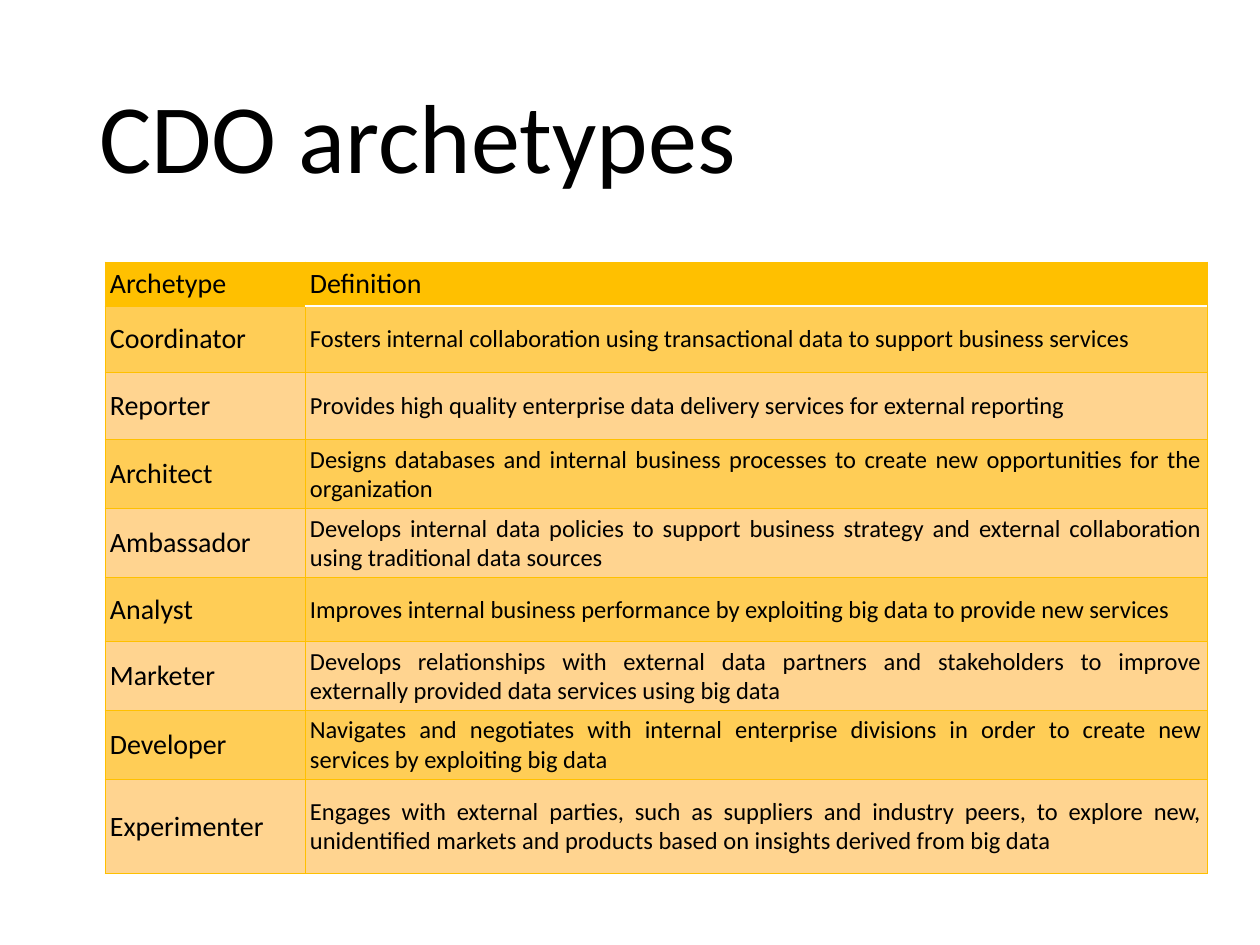
from lxml.etree import SubElement
from pptx import Presentation
from pptx.dml.color import RGBColor
from pptx.enum.text import MSO_ANCHOR, PP_ALIGN
from pptx.oxml.ns import qn
from pptx.util import Pt

PX = 914400 // 126
FONT = "Calibri"
COLORS = {"ink": "000000", "gold": "FFC000", "dark": "FFCD56",
          "light": "FFD490", "white": "FFFFFF"}

HEAD = ("Archetype", "Definition")
ROLES = [
    ("Coordinator", "Fosters internal collaboration using transactional data "
     "to support business services"),
    ("Reporter", "Provides high quality enterprise data delivery services "
     "for external reporting"),
    ("Architect", "Designs databases and internal business processes to create "
     "new opportunities for the organization"),
    ("Ambassador", "Develops internal data policies to support business strategy "
     "and external collaboration using traditional data sources"),
    ("Analyst", "Improves internal business performance by exploiting big data "
     "to provide new services"),
    ("Marketer", "Develops relationships with external data partners and "
     "stakeholders to improve externally provided data services using big data"),
    ("Developer", "Navigates and negotiates with internal enterprise divisions "
     "in order to create new services by exploiting big data"),
    ("Experimenter", "Engages with external parties, such as suppliers and "
     "industry peers, to explore new, unidentified markets and products based "
     "on insights derived from big data"),
]
WIDTHS = (200, 902)
HEIGHTS = (44, 67, 67, 69, 69, 64, 69, 69, 94)


def write(frame, text, size=16, color="ink", align=None, before=None, line=None):
    """Put one formatted paragraph in a text frame."""
    para = frame.paragraphs[0]
    para.alignment = align
    para.line_spacing = line
    if before is not None:
        para.space_before = Pt(before)
    run = para.add_run()
    run.text = text
    run.font.size = Pt(size)
    run.font.name = FONT
    run.font.color.rgb = RGBColor.from_string(COLORS[color])


class Deck:
    def __init__(self, wide, high):
        self.prs = Presentation()
        self.prs.slide_width, self.prs.slide_height = wide * PX, high * PX
        self.slide = self.prs.slides.add_slide(self.prs.slide_layouts[6])

    def text(self, text, x, y, w, h, **style):
        box = self.slide.shapes.add_textbox(x * PX, y * PX, w * PX, h * PX)
        frame = box.text_frame
        frame.word_wrap = True
        frame.vertical_anchor = MSO_ANCHOR.MIDDLE
        write(frame, text, **style)

    def table(self, x, y, widths, heights):
        frame = self.slide.shapes.add_table(
            len(heights), len(widths), x * PX, y * PX,
            sum(widths) * PX, sum(heights) * PX)
        grid = frame.table
        grid.first_row = grid.horz_banding = False
        for col, wide in zip(grid.columns, widths):
            col.width = wide * PX
        for row, high in zip(grid.rows, heights):
            row.height = high * PX
        return grid

    def cell(self, cell, text, fill, edges, **style):
        cell.margin_left = cell.margin_right = 5 * PX
        cell.margin_top = cell.margin_bottom = 5 * PX
        cell.vertical_anchor = MSO_ANCHOR.MIDDLE
        # Borders go ahead of the fill
        for side in "LRTB":
            color, width = edges.get(side, ("gold", 0.5))
            line = SubElement(cell._tc.get_or_add_tcPr(), qn("a:ln" + side),
                              w=str(Pt(width)))
            paint = SubElement(line, qn("a:solidFill"))
            SubElement(paint, qn("a:srgbClr"), val=COLORS[color])
        cell.fill.solid()
        cell.fill.fore_color.rgb = RGBColor.from_string(COLORS[fill])
        write(cell.text_frame, text, **style)


def main():
    deck = Deck(1260, 945)

    # Title
    deck.text("CDO archetypes", 87, 50, 1086, 183, size=56, line=0.9)

    # Table of archetypes
    grid = deck.table(105, 262, WIDTHS, HEIGHTS)
    rule = ("white", 1)
    for col, label in enumerate(HEAD):
        edges = {"L": ("gold", 0.5), "B": rule} if col else {}
        deck.cell(grid.cell(0, col), label, "gold", edges)
    for row, (role, task) in enumerate(ROLES, 1):
        fill = "dark" if row % 2 else "light"
        deck.cell(grid.cell(row, 0), role, fill, {})
        deck.cell(grid.cell(row, 1), task, fill, {"T": rule} if row == 1 else {},
                  size=14, align=PP_ALIGN.JUSTIFY, before=6)

    deck.prs.save("out.pptx")


if __name__ == "__main__":
    main()
